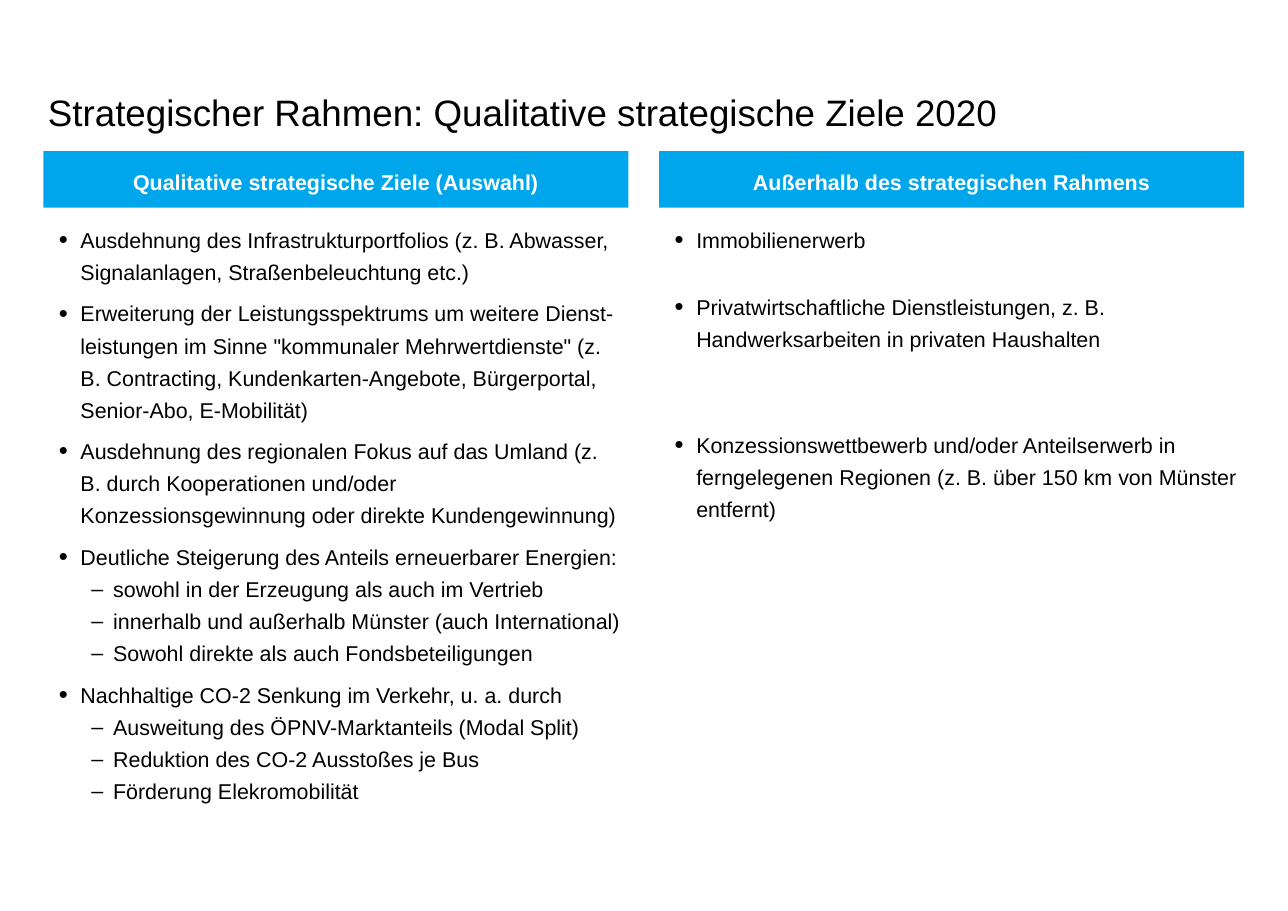
from lxml.etree import SubElement
from pptx import Presentation
from pptx.dml.color import RGBColor
from pptx.enum.shapes import MSO_SHAPE
from pptx.enum.text import MSO_ANCHOR, MSO_AUTO_SIZE, PP_ALIGN
from pptx.oxml.ns import qn
from pptx.util import Pt


def style_font(paragraph, size, color, bold=False):
    font = paragraph.font
    font.name, font.size, font.bold = "Arial", Pt(size), bold
    font.color.rgb = RGBColor.from_string(color)


def set_frame(frame, anchor):
    frame.word_wrap = True
    frame.auto_size = MSO_AUTO_SIZE.NONE
    frame.vertical_anchor = anchor
    frame.margin_left = frame.margin_right = Pt(3)
    frame.margin_top = frame.margin_bottom = Pt(3)


LEFT, COLUMN_WIDTH, COLUMN_STEP = 28.35, 382.5, 402.5
# Per level: bullet, bullet size in percent, left margin
BULLETS = [("•", 120, 21.3), ("–", 100, 42.6)]
HANGING = 14.2

# Heading, then (level, space before, text) for each column
columns = [
    ("Qualitative strategische Ziele (Auswahl)", [
        (0, 0, "Ausdehnung des Infrastrukturportfolios (z. B. Abwasser, "
               "Signalanlagen, Straßenbeleuchtung etc.)"),
        (0, 6, "Erweiterung der Leistungsspektrums um weitere Dienst-leistungen "
               "im Sinne \"kommunaler Mehrwertdienste\" (z. B. Contracting, "
               "Kundenkarten-Angebote, Bürgerportal, Senior-Abo, E-Mobilität)"),
        (0, 6, "Ausdehnung des regionalen Fokus auf das Umland (z. B. durch "
               "Kooperationen und/oder Konzessionsgewinnung oder direkte "
               "Kundengewinnung)"),
        (0, 6, "Deutliche Steigerung des Anteils erneuerbarer Energien:"),
        (1, 0, "sowohl in der Erzeugung als auch im Vertrieb"),
        (1, 0, "innerhalb und außerhalb Münster (auch International)"),
        (1, 0, "Sowohl direkte als auch Fondsbeteiligungen"),
        (0, 6, "Nachhaltige CO-2 Senkung im Verkehr, u. a. durch"),
        (1, 0, "Ausweitung des ÖPNV-Marktanteils (Modal Split)"),
        (1, 0, "Reduktion des CO-2 Ausstoßes je Bus"),
        (1, 0, "Förderung Elekromobilität"),
    ]),
    ("Außerhalb des strategischen Rahmens", [
        (0, 0, "Immobilienerwerb"),
        (0, 22.8, "Privatwirtschaftliche Dienstleistungen, z. B. "
                  "Handwerksarbeiten in privaten Haushalten"),
        (0, 48.3, "Konzessionswettbewerb und/oder Anteilserwerb in "
                  "ferngelegenen Regionen (z. B. über 150 km von Münster entfernt)"),
    ]),
]

deck = Presentation()
deck.slide_width, deck.slide_height = Pt(841.9), Pt(595.3)
page = deck.slides.add_slide(deck.slide_layouts[5])

# Title
title = page.shapes.title
title.left, title.top, title.width, title.height = Pt(LEFT), Pt(28.35), Pt(785.3), Pt(62.4)
set_frame(title.text_frame, MSO_ANCHOR.BOTTOM)
title.text_frame.text = "Strategischer Rahmen: Qualitative strategische Ziele 2020"
title.text_frame.paragraphs[0].alignment = PP_ALIGN.LEFT
style_font(title.text_frame.paragraphs[0], 24, "000000")

for index, (heading, items) in enumerate(columns):
    left = Pt(LEFT + index * COLUMN_STEP)

    # Column heading
    bar = page.shapes.add_shape(MSO_SHAPE.RECTANGLE, left, Pt(98.7), Pt(COLUMN_WIDTH), Pt(37))
    bar.shadow.inherit = False
    bar.fill.solid()
    bar.fill.fore_color.rgb = RGBColor.from_string("00A6EB")
    bar.line.fill.background()
    set_frame(bar.text_frame, MSO_ANCHOR.MIDDLE)
    bar.text_frame.text = heading
    paragraph = bar.text_frame.paragraphs[0]
    paragraph.alignment = PP_ALIGN.CENTER
    paragraph.line_spacing = 1.2
    style_font(paragraph, 14, "FFFFFF", bold=True)

    # Bulleted list
    box = page.shapes.add_textbox(left, Pt(141.1), Pt(COLUMN_WIDTH), Pt(368.6))
    set_frame(box.text_frame, MSO_ANCHOR.TOP)
    for number, (level, space, text) in enumerate(items):
        paragraph = box.text_frame.paragraphs[0] if number == 0 else box.text_frame.add_paragraph()
        paragraph.text = text
        paragraph.level = level
        paragraph.line_spacing = 1.25
        paragraph.space_before = Pt(space)
        character, percent, margin = BULLETS[level]
        properties = paragraph._p.get_or_add_pPr()
        properties.set("marL", str(Pt(margin)))
        properties.set("indent", str(-Pt(HANGING)))
        SubElement(properties, qn("a:buSzPct"), val=str(percent * 1000))
        SubElement(properties, qn("a:buFont"), typeface="Arial")
        SubElement(properties, qn("a:buChar"), char=character)
        style_font(paragraph, 14, "000000")

deck.save("out.pptx")
